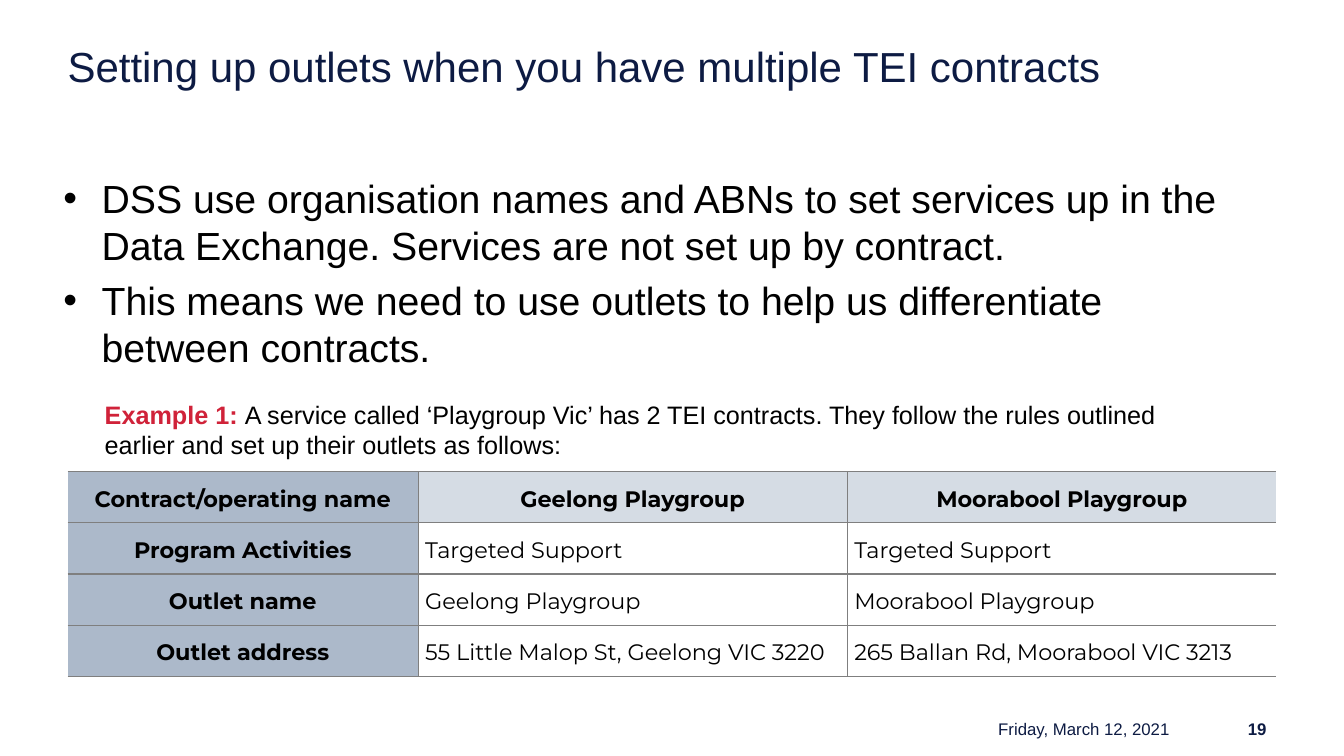
from lxml import etree
from pptx import Presentation
from pptx.dml.color import RGBColor
from pptx.enum.text import MSO_ANCHOR, PP_ALIGN
from pptx.oxml.ns import qn
from pptx.util import Inches, Pt

NAVY = RGBColor(0x0D, 0x1B, 0x43)
RED = RGBColor(0xD0, 0x22, 0x39)
BLACK = RGBColor(0, 0, 0)
GREY = RGBColor(0x7F, 0x7F, 0x7F)
LABEL_FILL = RGBColor(0xAC, 0xB9, 0xCA)
HEADER_FILL = RGBColor(0xD5, 0xDC, 0xE4)
LEFT, CENTER, RIGHT = PP_ALIGN.LEFT, PP_ALIGN.CENTER, PP_ALIGN.RIGHT
TOP, MIDDLE = MSO_ANCHOR.TOP, MSO_ANCHOR.MIDDLE

SLIDE_W, SLIDE_H = 13.33, 7.5
MARGIN = 0.67
CONTENT_W = SLIDE_W - 2 * MARGIN
COLUMN_SHARES = (0.29, 0.355, 0.355)
BULLETS = (
    "DSS use organisation names and ABNs to set services up in the Data Exchange. "
    "Services are not set up by contract.",
    "This means we need to use outlets to help us differentiate between contracts.",
)
OUTLETS = (
    ("Contract/operating name", "Geelong Playgroup", "Moorabool Playgroup"),
    ("Program Activities", "Targeted Support", "Targeted Support"),
    ("Outlet name", "Geelong Playgroup", "Moorabool Playgroup"),
    ("Outlet address", "55 Little Malop St, Geelong VIC 3220",
     "265 Ballan Rd, Moorabool VIC 3213"),
)


def add_run(p, text, size, color=BLACK, bold=False, name="Arial"):
    r = p.add_run()
    r.text = text
    for key, value in {"size": Pt(size), "bold": bold, "name": name}.items():
        setattr(r.font, key, value)
    r.font.color.rgb = color


def add_box(slide, box, anchor=TOP):
    """Add a wrapping text box and return its text frame."""
    tf = slide.shapes.add_textbox(*map(Inches, box)).text_frame
    tf.word_wrap = True
    tf.vertical_anchor = anchor
    return tf


def add_title(slide, box):
    tf = add_box(slide, box)
    for side in ("left", "top", "right", "bottom"):
        setattr(tf, f"margin_{side}", 0)
    add_run(tf.paragraphs[0],
            "Setting up outlets when you have multiple TEI contracts", 30, NAVY)


def add_bullets(slide, box):
    tf = add_box(slide, box)
    for i, text in enumerate(BULLETS):
        p = tf.add_paragraph() if i else tf.paragraphs[0]
        pPr = p._p.get_or_add_pPr()
        pPr.set("marL", str(Inches(0.38)))
        pPr.set("indent", str(-Inches(0.38)))
        etree.SubElement(pPr, qn("a:buFont"), typeface="Arial")
        etree.SubElement(pPr, qn("a:buChar"), char="•")
        if i:
            p.space_before = Pt(5.6)
        add_run(p, text, 28)


def add_example(slide, box):
    p = add_box(slide, box).paragraphs[0]
    add_run(p, "Example 1: ", 18, RED, True)
    add_run(p, "A service called ‘Playgroup Vic’ has 2 TEI contracts. They follow "
               "the rules outlined earlier and set up their outlets as follows:", 18)


def set_borders(cell, visible):
    """Draw grey lines on the visible sides (L, R, T, B) and none elsewhere."""
    tcPr = cell._tc.get_or_add_tcPr()
    for side in "LRTB":
        ln = etree.SubElement(tcPr, qn(f"a:ln{side}"), w=str(Pt(1)))
        if side in visible:
            fill = etree.SubElement(ln, qn("a:solidFill"))
            etree.SubElement(fill, qn("a:srgbClr"), val=str(GREY))
        else:
            etree.SubElement(ln, qn("a:noFill"))


def fill_cell(cell, text, row, col):
    heading = row == 0 or col == 0
    last = len(COLUMN_SHARES) - 1
    set_borders(cell, "TB" + ("L" if col else "") + ("R" if col < last else ""))
    if heading:
        cell.fill.solid()
        cell.fill.fore_color.rgb = HEADER_FILL if col else LABEL_FILL
    else:
        cell.fill.background()
    layout = {"vertical_anchor": MIDDLE, "margin_left": Inches(0.07),
              "margin_right": Inches(0.07), "margin_top": 0, "margin_bottom": 0}
    for key, value in layout.items():
        setattr(cell, key, value)
    p = cell.text_frame.paragraphs[0]
    p.alignment = CENTER if heading else LEFT
    p.line_spacing = 1.15
    add_run(p, text, 16, bold=heading, name="Montserrat")


def add_outlet_table(slide, box):
    x, y, w, h = map(Inches, box)
    table = slide.shapes.add_table(len(OUTLETS), len(COLUMN_SHARES), x, y, w, h).table
    table.first_row = table.horz_banding = False
    for column, share in zip(table.columns, COLUMN_SHARES):
        column.width = int(w * share)
    for row, texts in enumerate(OUTLETS):
        for col, text in enumerate(texts):
            fill_cell(table.cell(row, col), text, row, col)


def add_footer(slide, box):
    """Place the date and the page number, both ending at their right edge."""
    x, y, w, h = box
    parts = (("Friday, March 12, 2021", 0, 3.11, False), ("19", w - 1.09, 1.09, True))
    for text, offset, width, bold in parts:
        p = add_box(slide, (x + offset, y, width, h), MIDDLE).paragraphs[0]
        p.alignment = RIGHT
        add_run(p, text, 12, NAVY, bold)


def main():
    prs = Presentation()
    prs.slide_width, prs.slide_height = Inches(SLIDE_W), Inches(SLIDE_H)
    slide = prs.slides.add_slide(prs.slide_layouts[6])
    add_title(slide, (MARGIN, 0.4, CONTENT_W, 0.66))
    add_footer(slide, (8.59, 7.12, 4.07, 0.23))
    add_example(slide, (0.94, 3.91, 11.18, 0.71))
    add_outlet_table(slide, (MARGIN, 4.68, CONTENT_W, 2.03))
    add_bullets(slide, (0.53, 1.68, CONTENT_W, 1.88))
    prs.save("out.pptx")


if __name__ == "__main__":
    main()
